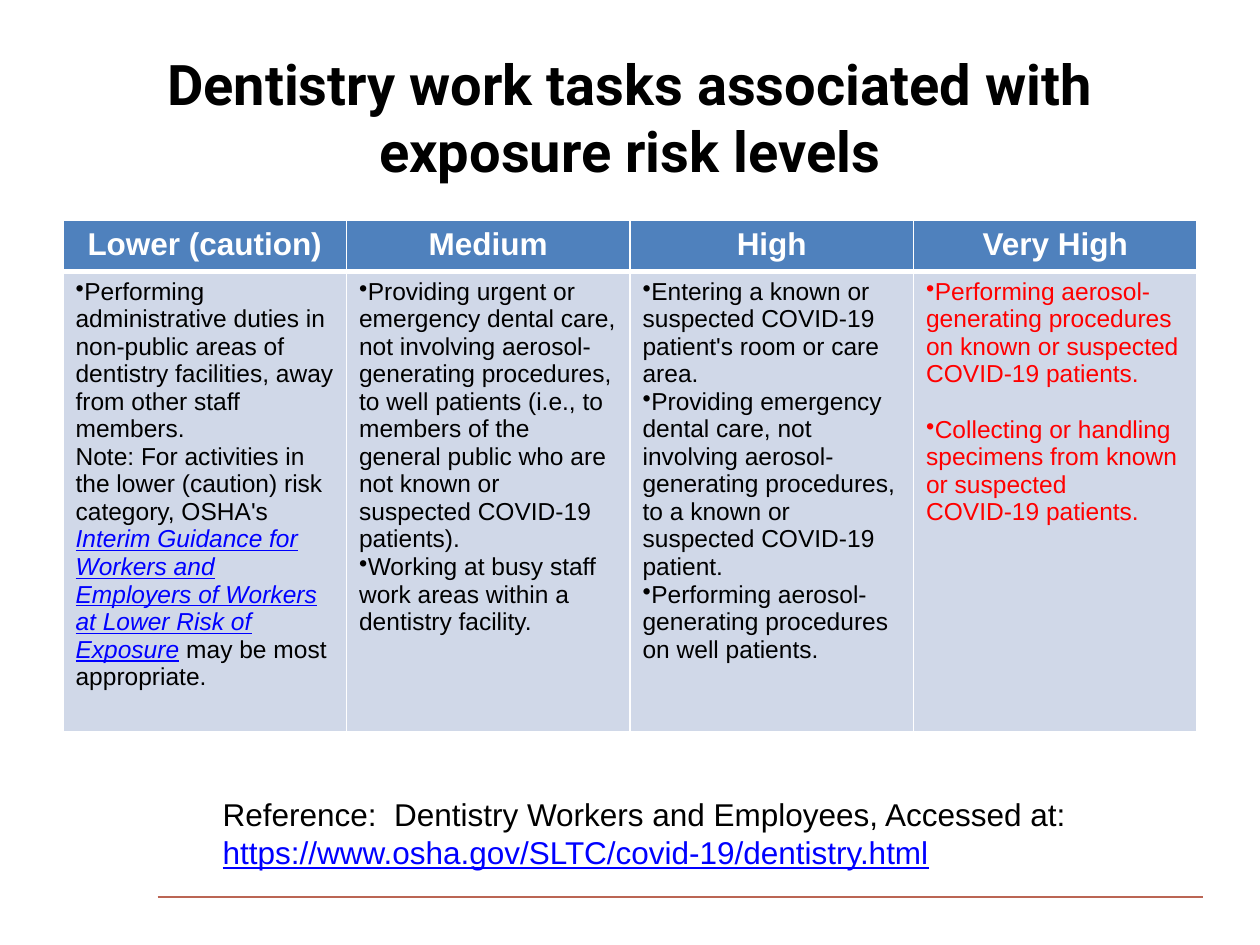
from dataclasses import dataclass

from lxml.etree import SubElement
from pptx import Presentation
from pptx.dml.color import RGBColor as RGB
from pptx.enum.shapes import MSO_CONNECTOR as Connector
from pptx.enum.text import MSO_ANCHOR as Anchor, MSO_AUTO_SIZE as AutoSize, PP_ALIGN as Align
from pptx.oxml.ns import qn
from pptx.util import Pt


@dataclass(frozen=True)
class Theme:
    title_font: str = "Roboto"
    body_font: str = "Arial"
    title_size: int = 32
    heading_size: int = 18
    body_size: int = 14
    black: str = "000000"
    white: str = "FFFFFF"
    warning: str = "FF0000"
    link: str = "0000FF"
    header_fill: str = "4F81BD"
    body_fill: str = "D0D8E8"
    rule: str = "BB6554"


@dataclass
class Item:
    """One paragraph: runs are (text, extra format) pairs."""
    runs: list
    bullet: bool = True
    gap: float = 0


class SlideBuilder:
    def __init__(self, slide, theme):
        self.slide = slide
        self.theme = theme

    def add_run(self, paragraph, text, **style):
        run = paragraph.add_run()
        run.text = text
        color = style.pop("color", self.theme.black)
        values = {"name": self.theme.body_font, "bold": False, **style}
        values["size"] = Pt(values["size"])
        for key, value in values.items():
            setattr(run.font, key, value)
        run.font.color.rgb = RGB.from_string(color)

    def add_bullet(self, paragraph):
        properties = paragraph._p.get_or_add_pPr()
        properties.set("marL", "0")
        properties.set("indent", "0")
        SubElement(properties, qn("a:buChar"), char="•")

    def title(self, text, left, top, width, height):
        title = self.slide.shapes.title
        place = {"left": left, "top": top, "width": width, "height": height}
        for key, value in place.items():
            setattr(title, key, Pt(value))
        frame = title.text_frame
        frame.word_wrap = True
        frame.vertical_anchor = Anchor.MIDDLE
        paragraph = frame.paragraphs[0]
        paragraph.alignment = Align.CENTER
        self.add_run(paragraph, text, name=self.theme.title_font,
                     size=self.theme.title_size, bold=True)

    def rule(self, left, right, y):
        line = self.slide.shapes.add_connector(
            Connector.STRAIGHT, Pt(left), Pt(y), Pt(right), Pt(y))
        line.line.color.rgb = RGB.from_string(self.theme.rule)
        line.line.width = Pt(0.75)
        SubElement(line._element.spPr, qn("a:effectLst"))

    def style_cell(self, cell, fill, bottom_width):
        properties = cell._tc.get_or_add_tcPr()
        for side, width in {"L": 1, "R": 1, "T": 1, "B": bottom_width}.items():
            border = SubElement(properties, qn(f"a:ln{side}"), w=str(Pt(width)))
            color = SubElement(border, qn("a:solidFill"))
            SubElement(color, qn("a:srgbClr"), val=self.theme.white)
        cell.fill.solid()
        cell.fill.fore_color.rgb = RGB.from_string(fill)

    def table(self, columns, left, top, width, row_heights):
        """columns: (heading, text colour, items) for each risk level."""
        theme = self.theme
        table = self.slide.shapes.add_table(
            2, len(columns), Pt(left), Pt(top), Pt(width), Pt(sum(row_heights))).table
        table.horz_banding = False
        for row, height in zip(table.rows, row_heights):
            row.height = Pt(height)
        for index, (heading, color, items) in enumerate(columns):
            table.columns[index].width = Pt(width / len(columns))
            header, body = table.cell(0, index), table.cell(1, index)
            self.style_cell(header, theme.header_fill, 3)
            self.style_cell(body, theme.body_fill, 1)
            paragraph = header.text_frame.paragraphs[0]
            paragraph.alignment = Align.CENTER
            self.add_run(paragraph, heading, size=theme.heading_size,
                         color=theme.white, bold=True)
            self.fill_items(body.text_frame, items, color)

    def fill_items(self, frame, items, color):
        for index, item in enumerate(items):
            paragraph = frame.add_paragraph() if index else frame.paragraphs[0]
            if item.bullet:
                self.add_bullet(paragraph)
            if item.gap:
                paragraph.space_before = Pt(item.gap)
            for text, extra in item.runs:
                self.add_run(paragraph, text,
                             **{"size": self.theme.body_size, "color": color, **extra})

    def reference(self, lines, left, top, width, height):
        box = self.slide.shapes.add_textbox(Pt(left), Pt(top), Pt(width), Pt(height))
        frame = box.text_frame
        frame.word_wrap = False
        frame.auto_size = AutoSize.SHAPE_TO_FIT_TEXT
        size = {"size": self.theme.heading_size}
        items = [Item([(text, {**size, **extra})], bullet=False) for text, extra in lines]
        self.fill_items(frame, items, self.theme.black)


def bullet(text, gap=0):
    return Item([(text, {})], gap=gap)


def main():
    theme = Theme()
    deck = Presentation()
    deck.slide_width, deck.slide_height = Pt(720), Pt(540)
    builder = SlideBuilder(deck.slides.add_slide(deck.slide_layouts[5]), theme)
    link = {"color": theme.link, "underline": True}

    risk_levels = [
        ("Lower (caution)", theme.black, [
            bullet("Performing administrative duties in non-public areas of dentistry "
                   "facilities, away from other staff members."),
            Item([
                ("Note: For activities in the lower (caution) risk category, OSHA's ", {}),
                ("Interim Guidance for Workers and Employers of Workers at Lower Risk "
                 "of Exposure", {**link, "italic": True}),
                (" may be most appropriate.", {}),
            ], bullet=False),
        ]),
        ("Medium", theme.black, [
            bullet("Providing urgent or emergency dental care, not involving "
                   "aerosol-generating procedures, to well patients (i.e., to members of "
                   "the general public who are not known or suspected COVID-19 patients)."),
            bullet("Working at busy staff work areas within a dentistry facility."),
        ]),
        ("High", theme.black, [
            bullet("Entering a known or suspected COVID-19 patient's room or care area."),
            bullet("Providing emergency dental care, not involving aerosol-generating "
                   "procedures, to a known or suspected COVID-19 patient."),
            bullet("Performing aerosol-generating procedures on well patients."),
        ]),
        ("Very High", theme.warning, [
            bullet("Performing aerosol-generating procedures on known or suspected "
                   "COVID-19 patients."),
            bullet("Collecting or handling specimens from known or suspected "
                   "COVID-19 patients.", gap=16),
        ]),
    ]

    builder.rule(90, 687.6, 512.6)
    builder.title("Dentistry work tasks associated with exposure risk levels",
                  36, 21.6, 648, 90)
    builder.table(risk_levels, 36, 126, 648, (29.2, 263))
    builder.reference([
        ("Reference:  Dentistry Workers and Employees, Accessed at:", {}),
        ("https://www.osha.gov/SLTC/covid-19/dentistry.html", link),
    ], 120.2, 450.7, 501, 51)

    deck.save("out.pptx")


if __name__ == "__main__":
    main()
